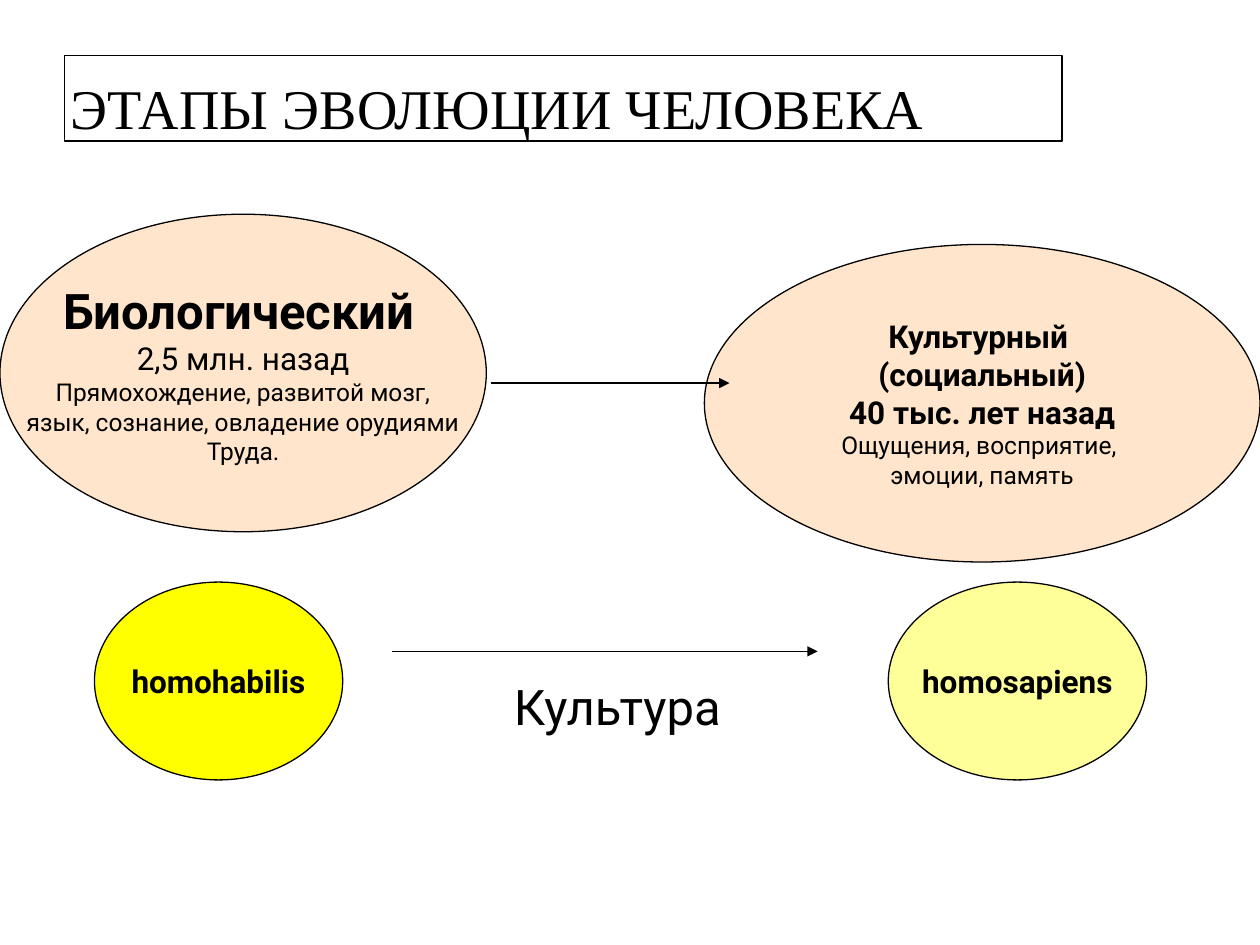
import pptx
import pptx.util
import pptx.dml.color
import pptx.enum.shapes
import pptx.enum.text
import pptx.oxml.ns
from lxml import etree

W, H = 10, 7.5
SANS, SERIF = "Roboto", "Times New Roman"
INK = "000000"
ALIGN = pptx.enum.text.PP_ALIGN
ANCHOR = pptx.enum.text.MSO_ANCHOR
KIND = pptx.enum.shapes.MSO_SHAPE

TITLE = [[("ЭТАПЫ ЭВОЛЮЦИИ ЧЕЛОВЕКА", 32, False)]]
CULTURE = [[("Культура", 28, False)]]
BIOLOGICAL = [
    [("Биологический", 28, True), (" ", 18, False)],
    [("2,5 млн. назад", 18, False)],
    [("Прямохождение, развитой мозг,", 14, False)],
    [("язык, сознание, овладение орудиями", 14, False)],
    [("Труда.", 14, False)],
]
CULTURAL = [
    [("Культурный ", 18, True)],
    [("(социальный)", 18, True)],
    [("40 тыс. лет назад", 18, True)],
    [("Ощущения, восприятие, ", 14, False)],
    [("эмоции, память", 14, False)],
]
OVALS = [
    ((0, 1.7, 3.86, 2.52), "FFCC99", 50, BIOLOGICAL),
    ((5.59, 1.94, 4.41, 2.52), "FFCC99", 50, CULTURAL),
    ((0.75, 4.62, 1.97, 1.57), "FFFF00", 100, [[("homohabilis", 18, True)]]),
    ((7.05, 4.62, 2.05, 1.57), "FFFF99", 100, [[("homosapiens", 18, True)]]),
]
ARROWS = [(3.9, 5.79, 3.04), (3.11, 6.49, 5.17)]


def inches(values):
    return [pptx.util.Inches(v) for v in values]


def rgb(value):
    return pptx.dml.color.RGBColor.from_string(value)


def sub(parent, tag, **attrs):
    return etree.SubElement(parent, pptx.oxml.ns.qn(tag), **attrs)


def outline(sp):
    sp.line.color.rgb = rgb(INK)
    sp.line.width = pptx.util.Pt(0.75)


def write(sp, paragraphs, font, align, anchor):
    tf = sp.text_frame
    tf.word_wrap = False
    tf.vertical_anchor = anchor
    for i, runs in enumerate(paragraphs):
        p = tf.add_paragraph() if i else tf.paragraphs[0]
        p.alignment = align
        for text, size, bold in runs:
            r = p.add_run()
            r.text = text
            r.font.name = font
            r.font.size = pptx.util.Pt(size)
            r.font.bold = bold
            r.font.color.rgb = rgb(INK)
    return tf


def add_oval(s, box, color, opacity, paragraphs):
    sp = s.shapes.add_shape(KIND.OVAL, *inches(box))
    sp.shadow.inherit = False
    sp.fill.solid()
    sp.fill.fore_color.rgb = rgb(color)
    if opacity < 100:
        fill = sp.fill._xPr.find(pptx.oxml.ns.qn("a:solidFill"))
        sub(fill[0], "a:alpha", val=str(opacity * 1000))
    outline(sp)
    write(sp, paragraphs, SANS, ALIGN.CENTER, ANCHOR.MIDDLE)


def add_arrow(s, x1, x2, y):
    line = s.shapes.add_connector(
        pptx.enum.shapes.MSO_CONNECTOR.STRAIGHT, *inches((x1, y, x2, y)))
    outline(line)
    sub(line.line._get_or_add_ln(), "a:tailEnd", type="triangle")
    sub(line._element.spPr, "a:effectLst")


def main():
    prs = pptx.Presentation()
    prs.slide_width, prs.slide_height = inches((W, H))
    s = prs.slides.add_slide(prs.slide_layouts[6])

    title = s.shapes.add_textbox(*inches((0.51, 0.44, 7.92, 0.68)))
    outline(title)
    tf = write(title, TITLE, SERIF, ALIGN.LEFT, ANCHOR.BOTTOM)
    tf.word_wrap = True
    tf.margin_left = tf.margin_right = pptx.util.Inches(0.05)
    tf.margin_top = tf.margin_bottom = 0

    for oval in OVALS:
        add_oval(s, *oval)
    for arrow in ARROWS:
        add_arrow(s, *arrow)

    label = s.shapes.add_textbox(*inches((3.98, 5.32, 1.86, 0.57)))
    write(label, CULTURE, SANS, ALIGN.LEFT, ANCHOR.MIDDLE)

    prs.save("out.pptx")


if __name__ == "__main__":
    main()
